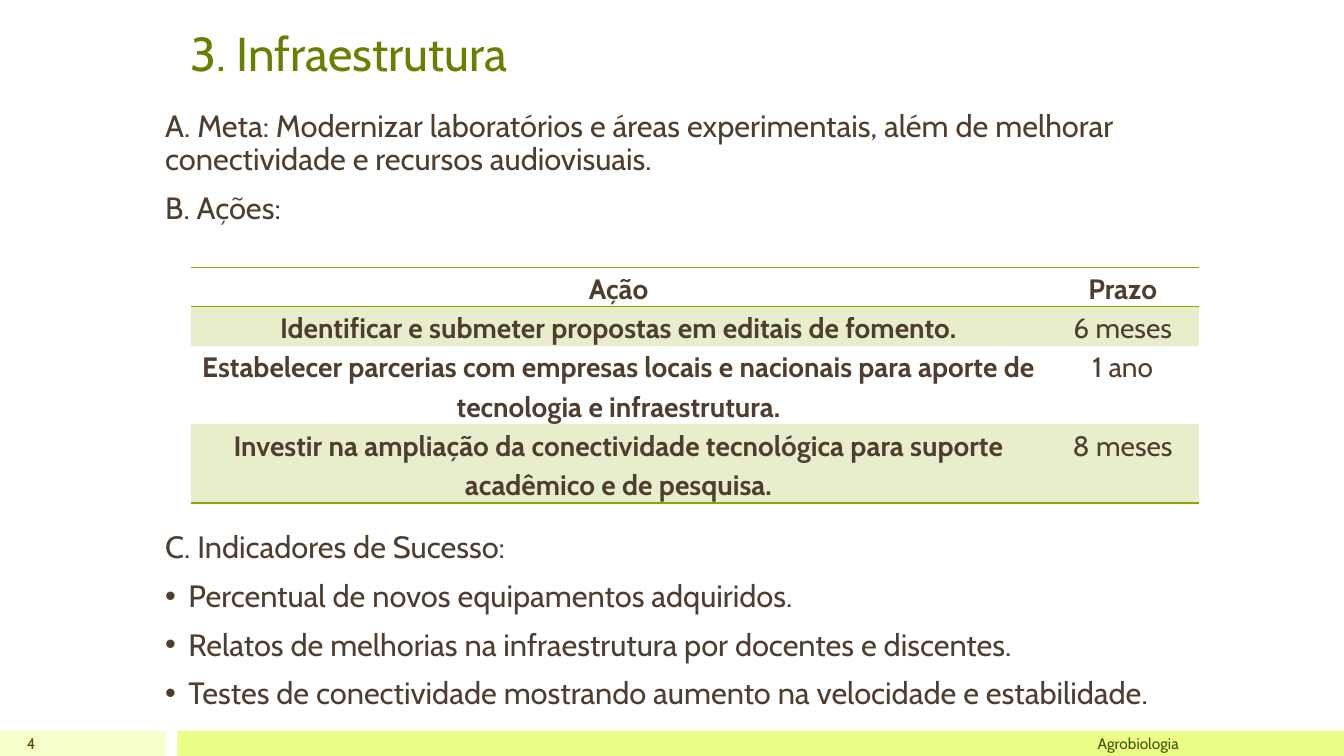
from lxml import etree
from pptx import Presentation
from pptx import util as u
from pptx.dml.color import RGBColor
from pptx.enum import shapes, text
from pptx.oxml.ns import qn

# Content
TITLE = "3. Infraestrutura"
GOAL = [
    "A. Meta: Modernizar laboratórios e áreas experimentais, além de melhorar "
    "conectividade e recursos audiovisuais.",
    "B. Ações:",
]
ACTIONS = [
    ("Ação", "Prazo"),
    ("Identificar e submeter propostas em editais de fomento.", "6 meses"),
    ("Estabelecer parcerias com empresas locais e nacionais para aporte de "
     "tecnologia e infraestrutura.", "1 ano"),
    ("Investir na ampliação da conectividade tecnológica para suporte "
     "acadêmico e de pesquisa.", "8 meses"),
]
INDICATORS_HEAD = "C. Indicadores de Sucesso:"
INDICATORS = [
    "Percentual de novos equipamentos adquiridos.",
    "Relatos de melhorias na infraestrutura por docentes e discentes.",
    "Testes de conectividade mostrando aumento na velocidade e estabilidade.",
]
PAGE_NUMBER, FOOTER = "4", "Agrobiologia"

# Layout and formats, in inches and points
WIDTH, HEIGHT = 13.33, 7.5
BAND = HEIGHT / 30
BAND_TOP = HEIGHT - BAND
BANDS = [(0, 1.64, "F6FFCC"), (1.76, WIDTH - 1.76, "E9FF88")]
BODY_LEFT, BODY_WIDTH = 1.54, 10.25
TABLE_LEFT, TABLE_TOP = 1.89, 2.65
COLUMNS = (8.49, 1.51)
LINE, ROW_LINES = 0.39, (1, 1, 2, 2)
BULLET_INDENT = 0.23
GREEN, BROWN, STRIPE = "8BAA00", "4D3E2F", "E8EECC"
NO_GRID_STYLE = "{2D5ABB26-0587-4C30-8999-92F81FD0307C}"

TITLE_FONT = dict(size=34, color="688000")
BODY_FONT = dict(size=22, color=BROWN)
CELL_FONT = dict(size=20, color=BROWN)
FOOTER_FONT = dict(size=11, color="455500")
BODY_PARA = dict(line_spacing=0.9, space_before=u.Pt(11))
CELL_PARA = dict(line_spacing=1.15, space_after=u.Pt(10),
                 alignment=text.PP_ALIGN.CENTER)
RIGHT = dict(alignment=text.PP_ALIGN.RIGHT)
MIDDLE, BOTTOM = text.MSO_ANCHOR.MIDDLE, text.MSO_ANCHOR.BOTTOM


def color(value):
    return RGBColor.from_string(value)


def write(para, words, font, layout, bold=False):
    for name, value in layout.items():
        setattr(para, name, value)
    span = para.add_run()
    span.text = words
    formats = dict(name="Cabin", size=u.Pt(font["size"]), bold=bold)
    for name, value in formats.items():
        setattr(span.font, name, value)
    span.font.color.rgb = color(font["color"])


def add_text(page, place, lines, font, layout, anchor=text.MSO_ANCHOR.TOP):
    frame = page.shapes.add_textbox(*map(u.Inches, place)).text_frame
    frame.word_wrap, frame.vertical_anchor = True, anchor
    for index, words in enumerate(lines):
        para = frame.add_paragraph() if index else frame.paragraphs[0]
        write(para, words, font, layout)
    return frame


def add_bullet(para):
    props = para._p.get_or_add_pPr()
    props.set("marL", str(u.Inches(BULLET_INDENT)))
    props.set("indent", str(-u.Inches(BULLET_INDENT)))
    etree.SubElement(props, qn("a:buFont"), typeface="Arial")
    etree.SubElement(props, qn("a:buChar"), char="•")


def add_border(cell, side):
    line = etree.SubElement(cell._tc.get_or_add_tcPr(), qn("a:" + side),
                            w=str(u.Pt(1)))
    fill = etree.SubElement(line, qn("a:solidFill"))
    etree.SubElement(fill, qn("a:srgbClr"), val=GREEN)


def add_actions(page):
    heights = [LINE * lines for lines in ROW_LINES]
    place = (TABLE_LEFT, TABLE_TOP, sum(COLUMNS), sum(heights))
    table = page.shapes.add_table(len(ACTIONS), len(COLUMNS),
                                  *map(u.Inches, place)).table
    table.first_row = table.horz_banding = False
    table._tbl.tblPr.find(qn("a:tableStyleId")).text = NO_GRID_STYLE
    for column, width in zip(table.columns, COLUMNS):
        column.width = u.Inches(width)
    for r, entries in enumerate(ACTIONS):
        table.rows[r].height = u.Inches(heights[r])
        for c, words in enumerate(entries):
            cell = table.cell(r, c)
            cell.margin_left = cell.margin_right = u.Inches(0.07)
            cell.margin_top = cell.margin_bottom = 0
            write(cell.text_frame.paragraphs[0], words, CELL_FONT, CELL_PARA,
                  bold=r == 0 or c == 0)
            if r == 0:
                add_border(cell, "lnT")
            if r in (0, len(ACTIONS) - 1):
                add_border(cell, "lnB")
            if r % 2:
                cell.fill.solid()
                cell.fill.fore_color.rgb = color(STRIPE)
            else:
                cell.fill.background()


def main():
    deck = Presentation()
    deck.slide_width, deck.slide_height = u.Inches(WIDTH), u.Inches(HEIGHT)
    page = deck.slides.add_slide(deck.slide_layouts[6])

    # Footer bands
    for left, width, tint in BANDS:
        place = map(u.Inches, (left, BAND_TOP, width, BAND))
        band = page.shapes.add_shape(shapes.MSO_SHAPE.RECTANGLE, *place)
        band.shadow.inherit = False
        band.fill.solid()
        band.fill.fore_color.rgb = color(tint)
        band.line.fill.background()

    # Title, goal and indicators
    add_text(page, (1.79, 0.14, 10, 0.71), [TITLE], TITLE_FONT, {}, BOTTOM)
    add_text(page, (BODY_LEFT, 1.05, BODY_WIDTH, 1.3), GOAL, BODY_FONT, BODY_PARA)
    frame = add_text(page, (BODY_LEFT, 5.23, BODY_WIDTH, 1.95),
                     [INDICATORS_HEAD] + INDICATORS, BODY_FONT, BODY_PARA)
    for para in frame.paragraphs[1:]:
        add_bullet(para)

    # Table of actions
    add_actions(page)

    # Page number and footer
    for left, width, words in [(0, 0.45, PAGE_NUMBER), (1.79, 10, FOOTER)]:
        add_text(page, (left, BAND_TOP, width, BAND), [words], FOOTER_FONT,
                 RIGHT, MIDDLE)

    deck.save("out.pptx")


if __name__ == "__main__":
    main()
